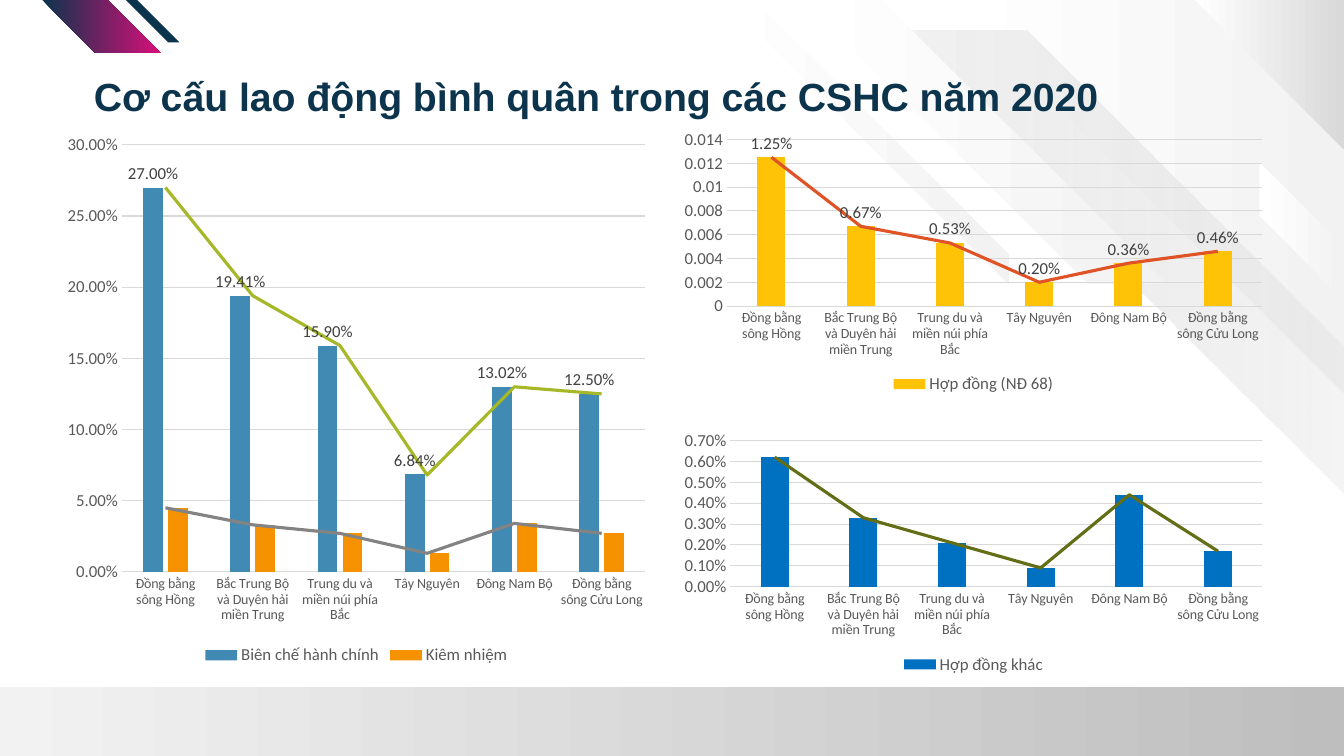
"""Build the slide on average labour structure by region in 2020."""
from lxml.etree import SubElement
from pptx import Presentation
from pptx.chart.data import CategoryChartData
from pptx.dml.color import RGBColor
from pptx.enum.chart import XL_CHART_TYPE, XL_LABEL_POSITION, XL_LEGEND_POSITION, XL_TICK_MARK
from pptx.enum.shapes import MSO_SHAPE
from pptx.enum.text import MSO_ANCHOR, PP_ALIGN
from pptx.oxml import parse_xml
from pptx.oxml.ns import nsdecls, qn
from pptx.util import Inches, Pt


def rgb(color):
    return RGBColor.from_string(color)


def paint(sp, colors, angle=0):
    sp.shadow.inherit = False
    sp.line.fill.background()
    if len(colors) == 1:
        sp.fill.solid()
        sp.fill.fore_color.rgb = rgb(colors[0])
        return
    sp.fill.gradient()
    sp.fill.gradient_angle = angle
    for stop, position, color in zip(sp.fill.gradient_stops, (0, 1), colors):
        stop.position = position
        stop.color.rgb = rgb(color)


prs = Presentation()
prs.slide_width, prs.slide_height = Inches(13.33), Inches(7.5)
s = prs.slides.add_slide(prs.slide_layouts[5])

band = s.shapes.add_shape(MSO_SHAPE.RECTANGLE, Inches(0), Inches(6.82), Inches(13.33), Inches(0.68))
paint(band, ["BFBEBE", "F2F2F2"], 180)

pale = ["FFFFFF", "F2F2F2"]
stripes = [
    ([(13.33, 0), (9.43, 0), (13.33, 3.9)], pale),
    ([(13.33, 3.44), (10.19, 0.3), (8.71, 0.3), (13.33, 4.91)], ["F2F2F2", "D9D9D9"]),
    ([(13.33, 2.45), (12.49, 1.61), (12.49, 2.14), (13.33, 2.98)], pale),
    ([(11.57, 2.82), (8.74, 0), (7.97, 0), (10.8, 2.82)], pale),
    ([(13.33, 0), (11.85, 0), (13.33, 1.48)], ["FFFFFF", "D9D9D9"]),
    ([(7.48, 0), (10.01, 2.53), (10.01, 2.82), (7.18, 0)], pale),
    ([(0.42, 0), (0.95, 0.53), (1.6, 0.53), (1.07, 0)], ["0C344C", "D80F79"]),
    ([(1.25, 0), (1.67, 0.42), (1.78, 0.42), (1.36, 0)], ["0C344C"]),
]
for points, colors in stripes:
    corners = [(Inches(x), Inches(y)) for x, y in points]
    builder = s.shapes.build_freeform(*corners[0])
    builder.add_line_segments(corners[1:], close=True)
    sp = builder.convert_to_shape()
    paint(sp, colors)
    if colors == ["F2F2F2", "D9D9D9"]:
        end_color = list(sp._element.iter(qn("a:srgbClr")))[-1]
        SubElement(end_color, qn("a:alpha"), val="26000")

title = s.shapes.title
s.shapes._spTree.append(title._element)
title.left, title.top, title.width, title.height = Inches(0.93), Inches(0.72), Inches(10.97), Inches(0.47)
tf = title.text_frame
tf.text = "Cơ cấu lao động bình quân trong các CSHC năm 2020"
tf.margin_left = tf.margin_right = tf.margin_top = tf.margin_bottom = 0
tf.vertical_anchor = MSO_ANCHOR.MIDDLE
tf.word_wrap = True
p = tf.paragraphs[0]
p.alignment = PP_ALIGN.LEFT
p.font.name, p.font.size, p.font.bold = "Arial", Pt(28), True
p.font.color.rgb = rgb("0C344C")

regions = ["Đồng bằng sông Hồng", "Bắc Trung Bộ và Duyên hải miền Trung", "Trung du và miền núi phía Bắc",
           "Tây Nguyên", "Đông Nam Bộ", "Đồng bằng sông Cửu Long"]
charts = [
    {"at": (0.55, 1.23, 5.97, 5.41), "max": 0.3, "step": 0.05, "fmt": "0.00%", "digits": 3, "labels": True,
     "series": [("Biên chế hành chính", "418AB3", "A6B727", [0.27, 0.1941, 0.159, 0.0684, 0.1302, 0.125]),
                ("Kiêm nhiệm", "F69200", "838383", [0.045, 0.033, 0.027, 0.013, 0.034, 0.027])]},
    {"at": (6.67, 1.23, 5.97, 2.72), "max": 0.014, "step": 0.002, "fmt": "General", "digits": 4, "labels": True,
     "series": [("Hợp đồng (NĐ 68)", "FEC306", "DF5327", [0.0125, 0.0067, 0.0053, 0.002, 0.0036, 0.0046])]},
    {"at": (6.67, 4.22, 5.97, 2.51), "max": 0.007, "step": 0.001, "fmt": "0.00%", "digits": 4, "labels": False,
     "series": [("Hợp đồng khác", "0070C0", "646E17", [0.0062, 0.0033, 0.0021, 0.0009, 0.0044, 0.0017])]},
]
for c in charts:
    count = len(c["series"])
    data = CategoryChartData(number_format="0.00%")
    data.categories = regions
    for name, _, _, values in c["series"]:
        data.add_series(name, values)
    for i, (_, _, _, values) in enumerate(c["series"], count + 1):
        data.add_series(f"Series {i}", [round(v, c["digits"]) for v in values])
    box = [Inches(n) for n in c["at"]]
    chart = s.shapes.add_chart(XL_CHART_TYPE.COLUMN_CLUSTERED, *box, data).chart
    chart.has_title = False
    chart.font.name, chart.font.size = "Calibri", Pt(10)
    chart.font.color.rgb = rgb("595959")

    cat_axis, val_axis = chart.category_axis, chart.value_axis
    for axis, size in ((cat_axis, 10), (val_axis, 12)):
        axis.major_tick_mark = axis.minor_tick_mark = XL_TICK_MARK.NONE
        axis.tick_labels.font.size = Pt(size)
    val_axis.minimum_scale, val_axis.maximum_scale, val_axis.major_unit = 0, c["max"], c["step"]
    val_axis.tick_labels.number_format = c["fmt"]
    val_axis.tick_labels.number_format_is_linked = False
    val_axis.format.line.fill.background()
    for line in (cat_axis.format.line, val_axis.major_gridlines.format.line):
        line.width = Pt(0.75)
        line.color.rgb = rgb("D9D9D9")

    plot = chart.plots[0]
    plot.gap_width, plot.overlap, plot.vary_by_categories = 219, -27, False
    series = list(plot.series)
    for (_, bar_color, line_color, _), bar, trend in zip(c["series"], series, series[count:]):
        bar.format.fill.solid()
        bar.format.fill.fore_color.rgb = rgb(bar_color)
        trend.format.line.width = Pt(2.25)
        trend.format.line.color.rgb = rgb(line_color)
    if c["labels"]:
        labels = series[0].data_labels
        labels.show_value = True
        labels.number_format, labels.number_format_is_linked = "0.00%", False
        labels.position = XL_LABEL_POSITION.OUTSIDE_END
        labels.font.size = Pt(12)
        labels.font.color.rgb = rgb("404040")

    chart.has_legend = True
    legend = chart.legend
    legend.position, legend.include_in_layout = XL_LEGEND_POSITION.BOTTOM, False
    legend.font.size = Pt(12)

    bars = plot._element
    lines = parse_xml(f'<c:lineChart {nsdecls("c")}><c:grouping val="standard"/>'
                      '<c:varyColors val="0"/></c:lineChart>')
    bars.addnext(lines)
    legend_pos = legend._element.find(qn("c:legendPos"))
    for i, trend in reversed(list(enumerate(series[count:], count))):
        ser = trend.format._element
        for flag in ser.findall(qn("c:invertIfNegative")):
            ser.remove(flag)
        ser.find(qn("c:spPr")).addnext(parse_xml(f'<c:marker {nsdecls("c")}><c:symbol val="none"/></c:marker>'))
        SubElement(ser, qn("c:smooth"), val="0")
        lines.insert(2, ser)
        entry = parse_xml(f'<c:legendEntry {nsdecls("c")}><c:idx val="{i}"/><c:delete val="1"/></c:legendEntry>')
        if legend_pos is None:
            legend._element.insert(0, entry)
        else:
            legend_pos.addnext(entry)
    SubElement(lines, qn("c:marker"), val="1")
    for axis_id in bars.findall(qn("c:axId")):
        SubElement(lines, qn("c:axId"), val=axis_id.get("val"))

prs.save("out.pptx")
